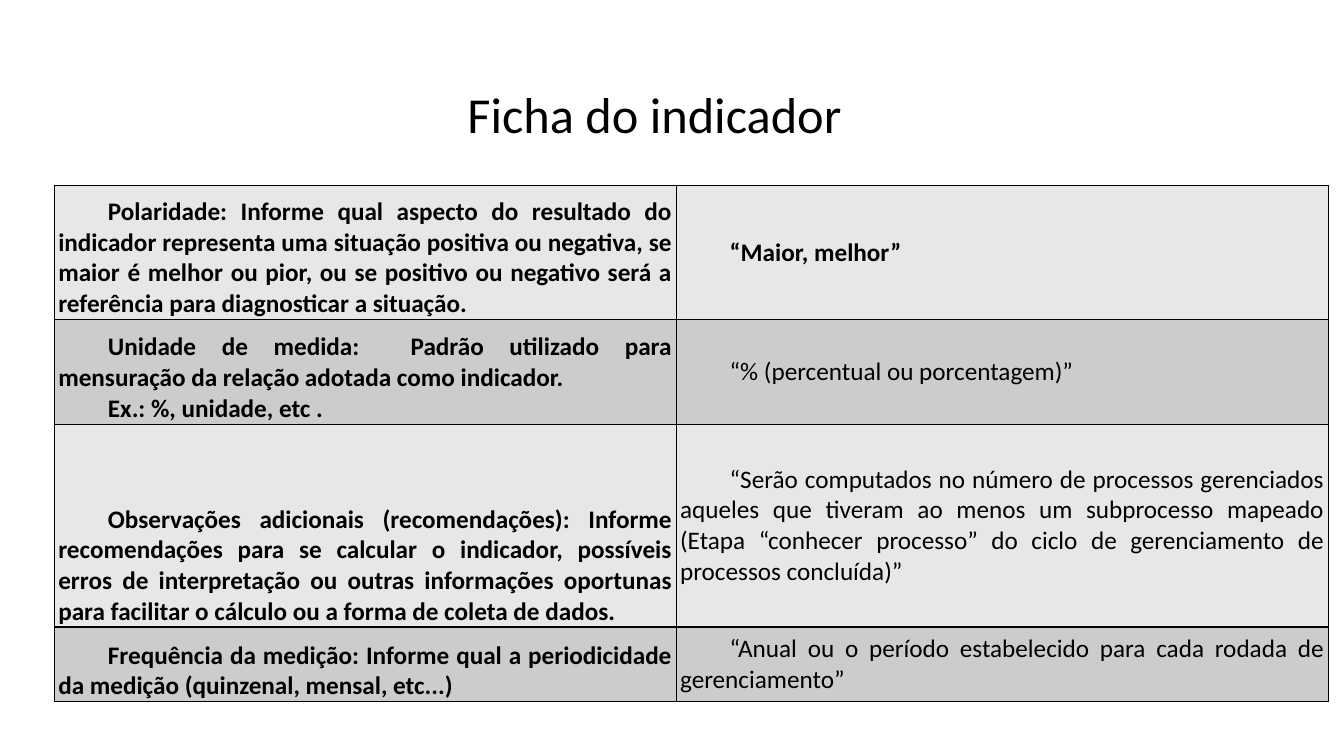
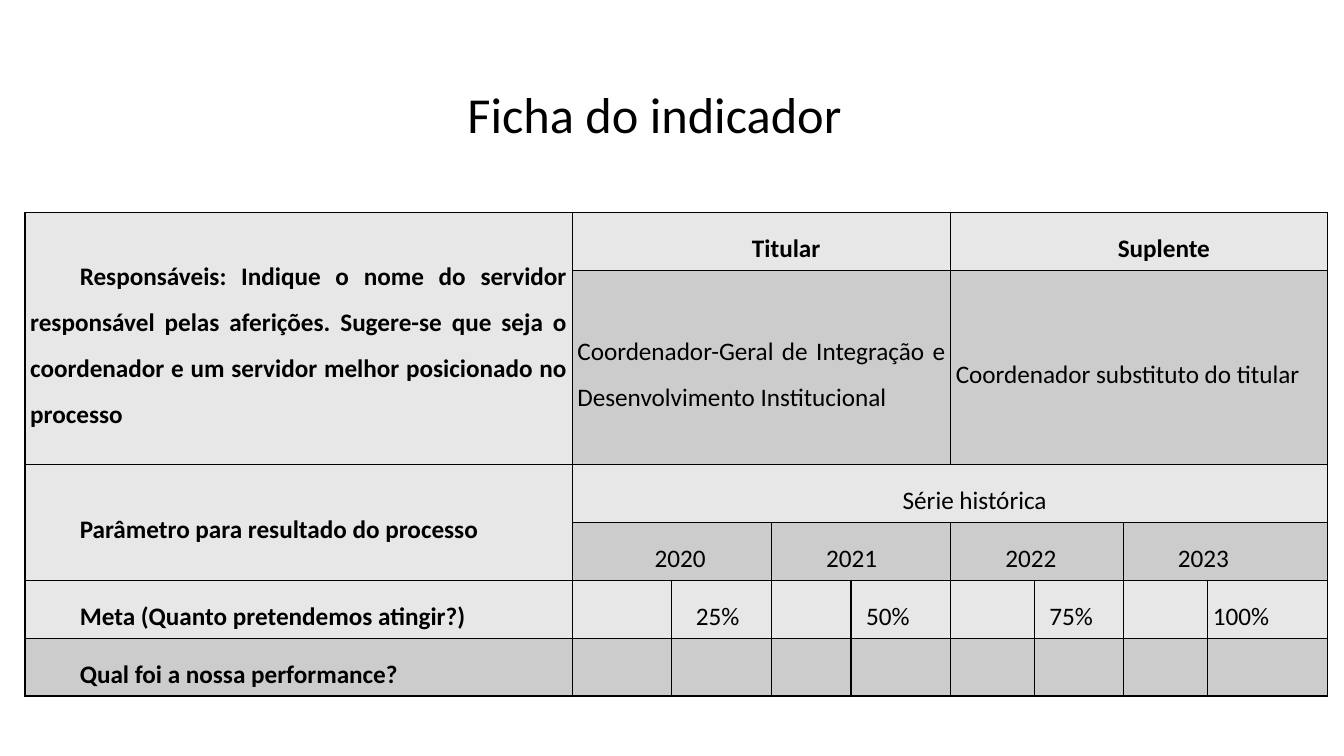
"""Build two slides that hold the tables of an indicator sheet."""
from dataclasses import dataclass

from lxml.etree import SubElement
from pptx import Presentation
from pptx.dml.color import RGBColor
from pptx.enum.text import MSO_ANCHOR, MSO_AUTO_SIZE, PP_ALIGN
from pptx.oxml.ns import qn
from pptx.slide import Slide
from pptx.table import _Cell
from pptx.text.text import TextFrame
from pptx.util import Cm, Pt

BLACK = RGBColor(0x00, 0x00, 0x00)
LIGHT = RGBColor(0xE7, 0xE7, 0xE7)
DARK = RGBColor(0xCC, 0xCC, 0xCC)
FONT = "Calibri"
TITLE = "Ficha do indicador"
INDENT = 1.25


@dataclass(frozen=True)
class Entry:
    """Text of one cell, its place, span and format."""
    row: int
    col: int
    text: str
    bold: bool = False
    align: PP_ALIGN = PP_ALIGN.JUSTIFY
    indent: float = INDENT
    anchor: MSO_ANCHOR = MSO_ANCHOR.MIDDLE
    down: int = 1
    wide: int = 1


@dataclass(frozen=True)
class Grid:
    """Place, sizes in centimetres and entries of one table."""
    left: float
    top: float
    cols: tuple[float, ...]
    rows: tuple[float, ...]
    inset: float
    space: float
    items: tuple[Entry, ...]


def label(row: int, text: str) -> Entry:
    """Return a bold entry at the foot of the first column."""
    return Entry(row, 0, text, bold=True, anchor=MSO_ANCHOR.BOTTOM)


SHEET = Grid(
    1.37, 4.67, (15.67, 16.43), (3.38, 2.64, 5.11, 1.88), 0.1, 1.0,
    (
        label(0, "Polaridade: Informe qual aspecto do resultado do indicador representa "
                 "uma situação positiva ou negativa, se maior é melhor ou pior, ou se "
                 "positivo ou negativo será a referência para diagnosticar a situação."),
        Entry(0, 1, "“Maior, melhor”", bold=True),
        label(1, "Unidade de medida:  Padrão utilizado para mensuração da relação "
                 "adotada como indicador.\nEx.: %, unidade, etc ."),
        Entry(1, 1, "“% (percentual ou porcentagem)”"),
        label(2, "Observações adicionais (recomendações): Informe recomendações para se "
                 "calcular o indicador, possíveis erros de interpretação ou outras "
                 "informações oportunas para facilitar o cálculo ou a forma de coleta "
                 "de dados."),
        Entry(2, 1, "“Serão computados no número de processos gerenciados aqueles que "
                    "tiveram ao menos um subprocesso mapeado (Etapa “conhecer processo” "
                    "do ciclo de gerenciamento de processos concluída)”"),
        label(3, "Frequência da medição: Informe qual a periodicidade da medição "
                 "(quinzenal, mensal, etc...)"),
        Entry(3, 1, "“Anual ou o período estabelecido para cada rodada de gerenciamento”"),
    ),
)

YEARS = (
    ("2020", 1.95, "25%", 0.48),
    ("2021", INDENT, "50%", 0.25),
    ("2022", INDENT, "75%", 0.25),
    ("2023", INDENT, "100%", 0),
)

GOALS = Grid(
    0.63, 5.36, (13.79, 2.51, 2.51, 2.01, 2.51, 2.11, 2.24, 2.13, 3.02),
    (1.46, 4.88, 1.46, 1.46, 1.46, 1.46), 0.13, 1.5,
    (
        Entry(0, 0, "Responsáveis: Indique o nome do servidor responsável pelas "
                    "aferições. Sugere-se que seja o coordenador e um servidor melhor "
                    "posicionado no processo", bold=True, down=2),
        Entry(0, 1, "Titular", bold=True, align=PP_ALIGN.CENTER, wide=4),
        Entry(0, 5, "Suplente", bold=True, align=PP_ALIGN.CENTER, wide=4),
        Entry(1, 1, "Coordenador-Geral de Integração e Desenvolvimento Institucional",
              indent=0, wide=4),
        Entry(1, 5, "Coordenador substituto do titular", indent=0, wide=4),
        Entry(2, 0, "Parâmetro para resultado do processo", bold=True, down=2),
        Entry(2, 1, "Série histórica", align=PP_ALIGN.CENTER, wide=8),
        *(Entry(3, 1 + 2 * n, year, indent=shift, wide=2)
          for n, (year, shift, _, _) in enumerate(YEARS)),
        Entry(4, 0, "Meta (Quanto pretendemos atingir?)", bold=True),
        *(Entry(4, 2 + 2 * n, goal, indent=shift)
          for n, (_, _, goal, shift) in enumerate(YEARS)),
        Entry(5, 0, "Qual foi a nossa performance?", bold=True),
    ),
)


def write(frame: TextFrame, text: str, *, size: float = 18, bold: bool = False,
          align: PP_ALIGN = PP_ALIGN.LEFT, indent: float = 0, space: float = 1.0) -> None:
    """Fill a frame with one formatted paragraph per line of text."""
    frame.word_wrap = True
    for n, line in enumerate(text.split("\n")):
        para = frame.add_paragraph() if n else frame.paragraphs[0]
        para.alignment = align
        para.line_spacing = space
        para._p.get_or_add_pPr().set("indent", str(int(Cm(indent))))
        run = para.add_run()
        run.text = line
        run.font.name = FONT
        run.font.size = Pt(size)
        run.font.bold = bold
        run.font.color.rgb = BLACK


def paint(cell: _Cell, tint: RGBColor) -> None:
    """Give a cell four black borders and a fill."""
    props = cell._tc.get_or_add_tcPr()
    for side in ("lnL", "lnR", "lnT", "lnB"):
        line = SubElement(props, qn(f"a:{side}"), w=str(int(Pt(1))))
        fill = SubElement(line, qn("a:solidFill"))
        SubElement(fill, qn("a:srgbClr"), val=str(BLACK))
    cell.fill.solid()
    cell.fill.fore_color.rgb = tint


def head(slide: Slide) -> None:
    """Add the shared slide title."""
    box = slide.shapes.add_textbox(Cm(11.53), Cm(1.98), Cm(10.24), Cm(1.8))
    write(box.text_frame, TITLE, size=36)
    box.text_frame.auto_size = MSO_AUTO_SIZE.SHAPE_TO_FIT_TEXT


def draw(slide: Slide, grid: Grid) -> None:
    """Draw a grid as a table with rows in two alternating tints."""
    table = slide.shapes.add_table(
        len(grid.rows), len(grid.cols), Cm(grid.left), Cm(grid.top),
        Cm(sum(grid.cols)), Cm(sum(grid.rows))).table
    table.first_row = table.horz_banding = False
    for col, width in zip(table.columns, grid.cols):
        col.width = Cm(width)
    for n, (row, height) in enumerate(zip(table.rows, grid.rows)):
        row.height = Cm(height)
        for cell in row.cells:
            paint(cell, DARK if n % 2 else LIGHT)
    for item in grid.items:
        cell = table.cell(item.row, item.col)
        if item.down * item.wide > 1:
            cell.merge(table.cell(item.row + item.down - 1, item.col + item.wide - 1))
        cell.margin_left = cell.margin_right = Cm(grid.inset)
        cell.margin_top = cell.margin_bottom = 0
        cell.vertical_anchor = item.anchor
        write(cell.text_frame, item.text, bold=item.bold, align=item.align,
              indent=item.indent, space=grid.space)


def main() -> None:
    """Build and save the deck."""
    deck = Presentation()
    deck.slide_width, deck.slide_height = Cm(33.87), Cm(19.05)
    for grid in (SHEET, GOALS):
        slide = deck.slides.add_slide(deck.slide_layouts[6])
        draw(slide, grid)
        head(slide)
    deck.save("out.pptx")


if __name__ == "__main__":
    main()
